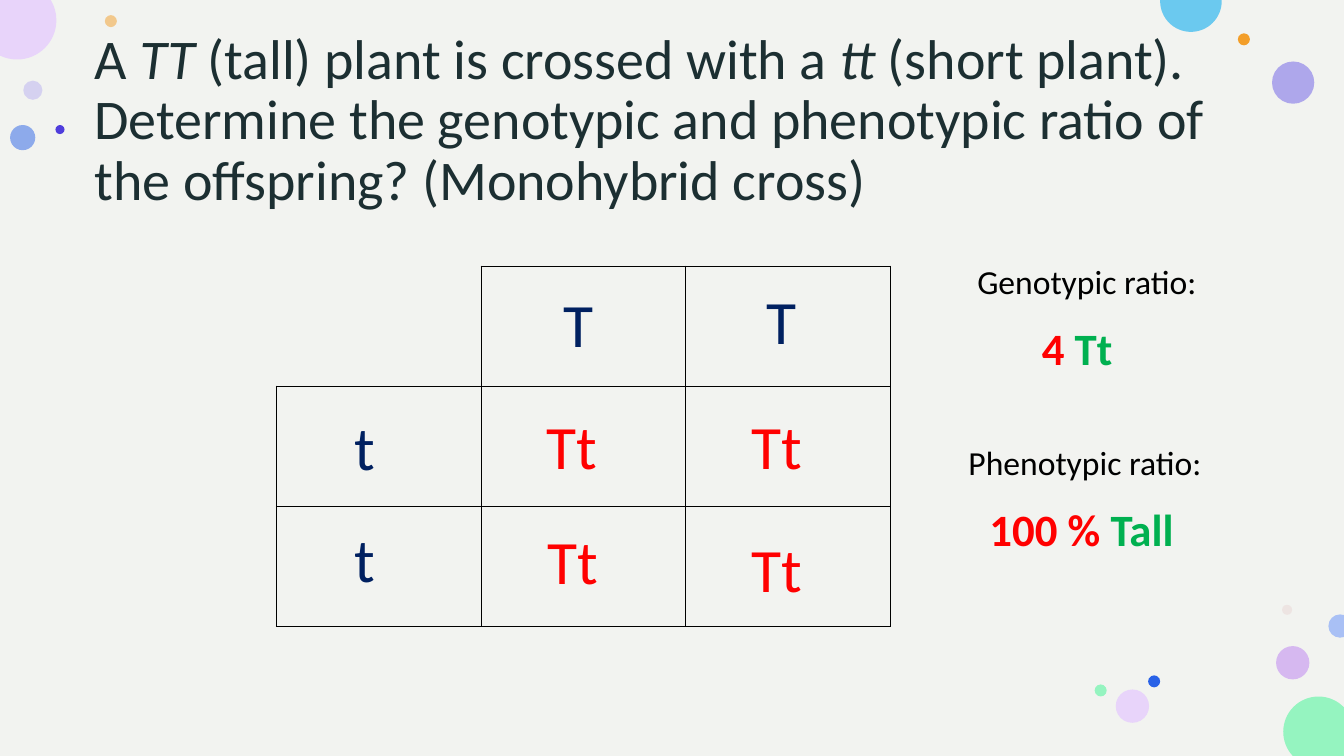
from dataclasses import dataclass
from math import acos, asin, cos, pi, sin, tan

from lxml.etree import SubElement
from pptx import Presentation
from pptx.dml.color import RGBColor
from pptx.enum.shapes import MSO_SHAPE
from pptx.enum.text import MSO_ANCHOR, PP_ALIGN
from pptx.oxml.ns import qn
from pptx.util import Pt


@dataclass(frozen=True)
class Theme:
    font: str = "Calibri"
    background: str = "F2F3F0"
    title: str = "1C2F32"
    parent: str = "002060"
    offspring: str = "FF0000"
    result: str = "00B050"
    text: str = "000000"
    lavender: str = "E8D4FA"
    mint: str = "95F4C0"
    orange: str = "F39E29"
    blue: str = "2962E7"
    title_size: int = 40
    allele_size: int = 44
    heading_size: int = 24
    value_size: int = 32


THEME = Theme()
WIDTH, HEIGHT = 960, 540

BUBBLES = [
    (16.6, 57.6, 13.7, "B9B1F1", 50),
    (74.9, 10.8, 8.6, THEME.orange, 50),
    (911.5, 461.5, 23.8, "BB7FF1", 50),
    (7.2, 89.3, 18, THEME.blue, 50),
    (908.6, 43.9, 30.2, "958BEA", 72),
    (884.2, 23.8, 8.6, THEME.orange, 100),
    (915.8, 432, 7.2, "E3BEBE", 28),
    (820.1, 482.4, 8.6, THEME.blue, 100),
    (797, 492.5, 23.8, THEME.lavender, 100),
    (781.9, 488.9, 8.6, THEME.mint, 100),
    (916.6, 497.5, 50.4, THEME.mint, 100),
    (-15.9, -13.7, 56.2, THEME.lavender, 100),
    (828.7, -21.2, 44, "6BC9EF", 100),
    (39.6, 89.3, 6.5, "4F3DDC", 100),
    (948.9, 438.9, 16.6, "A9C0F5", 100),
]

ALLELES = [
    ("T", 197.6, 10.8, 43.2, THEME.parent),
    ("T", 342.7, 8.8, 43.2, THEME.parent),
    ("t", 49, 98.6, 43.2, THEME.parent),
    ("t", 49, 178.2, 43.2, THEME.parent),
    ("Tt", 185.8, 97.9, 64.8, THEME.offspring),
    ("Tt", 186.8, 180, 64.8, THEME.offspring),
    ("Tt", 331.9, 97.9, 64.8, THEME.offspring),
    ("Tt", 331.9, 185.8, 64.8, THEME.offspring),
]


def add_text(slide, box, runs, size, color, bold=False):
    shape = slide.shapes.add_textbox(*map(Pt, box))
    shape.text_frame.word_wrap = True
    paragraph = shape.text_frame.paragraphs[0]
    paragraph.font.name = THEME.font
    paragraph.font.size = Pt(size)
    paragraph.font.bold = bold
    paragraph.font.color.rgb = RGBColor.from_string(color)
    for text in runs:
        paragraph.add_run().text = text
    return shape


def on_slide(x, y):
    return -0.01 <= x <= WIDTH + 0.01 and -0.01 <= y <= HEIGHT + 0.01


def visible_arc(x, y, radius):
    angles = []
    for edge in (0, WIDTH):
        if abs(edge - x) < radius:
            angle = acos((edge - x) / radius)
            angles += [angle, 2 * pi - angle]
    for edge in (0, HEIGHT):
        if abs(edge - y) < radius:
            angle = asin((edge - y) / radius)
            angles += [angle % (2 * pi), pi - angle]
    start, end = sorted(a for a in angles if on_slide(x + radius * cos(a), y + radius * sin(a)))
    middle = (start + end) / 2
    if on_slide(x + radius * cos(middle), y + radius * sin(middle)):
        return start, end
    return end, start + 2 * pi


def add_clipped_circle(slide, left, top, diameter):
    radius = diameter / 2
    x, y = left + radius, top + radius
    start, end = visible_arc(x, y, radius)
    quarters = [step * pi / 2 for step in range(8) if start < step * pi / 2 < end]
    stops = [start, *quarters, end]
    points = [(x + radius * cos(start), y + radius * sin(start))]
    for first, last in zip(stops, stops[1:]):
        handle = 4 / 3 * tan((last - first) / 4)
        for angle, reach in ((first, handle), (last, -handle), (last, 0)):
            points.append((x + radius * (cos(angle) - reach * sin(angle)),
                           y + radius * (sin(angle) + reach * cos(angle))))
    curve_points = len(points) - 1
    points += [(edge_x, edge_y) for edge_x in (0, WIDTH) for edge_y in (0, HEIGHT)
               if (edge_x - x) ** 2 + (edge_y - y) ** 2 < radius ** 2]
    points = [(Pt(point_x), Pt(point_y)) for point_x, point_y in points]
    builder = slide.shapes.build_freeform(*points[0])
    builder.add_line_segments(points[1:], close=True)
    shape = builder.convert_to_shape()
    segments = list(shape._element.iter(qn("a:lnTo")))[:curve_points]
    for index in range(0, curve_points, 3):
        curve = segments[index]
        outline = curve.getparent()
        bezier = SubElement(outline, qn("a:cubicBezTo"))
        outline.replace(curve, bezier)
        for segment in segments[index:index + 3]:
            bezier.append(segment[0])
        for segment in segments[index + 1:index + 3]:
            outline.remove(segment)
    return shape


def paint(shape, color):
    shape.shadow.inherit = False
    shape.line.fill.background()
    shape.fill.solid()
    shape.fill.fore_color.rgb = RGBColor.from_string(color)


def add_bubble(slide, left, top, diameter, color, opacity):
    if on_slide(left, top) and on_slide(left + diameter, top + diameter):
        shape = slide.shapes.add_shape(MSO_SHAPE.OVAL, Pt(left), Pt(top), Pt(diameter), Pt(diameter))
    else:
        shape = add_clipped_circle(slide, left, top, diameter)
    paint(shape, color)
    if opacity < 100:
        color_element = shape.fill._xPr.find(qn("a:solidFill"))[0]
        SubElement(color_element, qn("a:alpha"), val=str(opacity * 1000))


def add_backdrop(slide):
    paint(slide.shapes.add_shape(MSO_SHAPE.RECTANGLE, 0, 0, Pt(WIDTH), Pt(HEIGHT)), THEME.background)
    for bubble in BUBBLES:
        add_bubble(slide, *bubble)


def add_title(slide, box):
    runs = ["A ", "TT", " (tall) plant is crossed with a ", "tt",
            " (short plant). Determine the genotypic and phenotypic ratio of"
            " the offspring? (Monohybrid cross)"]
    shape = add_text(slide, box, runs, THEME.title_size, THEME.title)
    shape.text_frame.vertical_anchor = MSO_ANCHOR.MIDDLE
    paragraph = shape.text_frame.paragraphs[0]
    paragraph.line_spacing = 0.9
    for run in paragraph.runs[1::2]:
        run.font.italic = True


def set_borders(cell, visible):
    properties = cell._tc.get_or_add_tcPr()
    for index, side in enumerate(("lnL", "lnR", "lnT", "lnB")):
        line = SubElement(properties, qn(f"a:{side}"), w=str(Pt(1)))
        if side in visible:
            fill = SubElement(line, qn("a:solidFill"))
            SubElement(fill, qn("a:srgbClr"), val=THEME.text)
        else:
            SubElement(line, qn("a:noFill"))
        properties.insert(index, line)


def add_punnett_square(slide, box):
    left, top, width, height = box
    table = slide.shapes.add_table(3, 3, *map(Pt, box)).table
    table.first_row = False
    table.horz_banding = False
    for column in table.columns:
        column.width = Pt(width / 3)
    for row_index, row in enumerate(table.rows):
        row.height = Pt(height / 3)
        for column_index, cell in enumerate(row.cells):
            cell.fill.background()
            corner = row_index == column_index == 0
            set_borders(cell, ("lnR", "lnB") if corner else ("lnL", "lnR", "lnT", "lnB"))
    for text, x, y, label_width, color in ALLELES:
        add_text(slide, (left + x, top + y, label_width, 60.5), [text], THEME.allele_size, color)


def add_ratio(slide, heading_box, value_box, heading, value, alignment):
    add_text(slide, heading_box, [heading], THEME.heading_size, THEME.text)
    shape = add_text(slide, value_box, value, THEME.value_size, THEME.offspring, bold=True)
    paragraph = shape.text_frame.paragraphs[0]
    paragraph.alignment = alignment
    paragraph.runs[1].font.color.rgb = RGBColor.from_string(THEME.result)


def add_ratios(slide, box):
    left, top, width, _ = box
    add_ratio(slide, (left + 39.4, top, 180, 36), (left + 85.5, top + 42.8, 65.4, 46),
              "Genotypic ratio:", ["4", " Tt"], PP_ALIGN.LEFT)
    add_ratio(slide, (left + 33.1, top + 129.3, 208.8, 36), (left, top + 171.8, width, 46),
              "Phenotypic ratio:", ["100 % ", "Tall"], PP_ALIGN.CENTER)


def main():
    presentation = Presentation()
    presentation.slide_width = Pt(WIDTH)
    presentation.slide_height = Pt(HEIGHT)
    slide = presentation.slides.add_slide(presentation.slide_layouts[6])
    add_backdrop(slide)
    add_title(slide, (60.5, 34.6, 839.5, 104.4))
    add_punnett_square(slide, (197.5, 190.1, 438.6, 257.4))
    add_ratios(slide, (651.6, 182.9, 241.9, 217.8))
    presentation.save("out.pptx")


if __name__ == "__main__":
    main()
